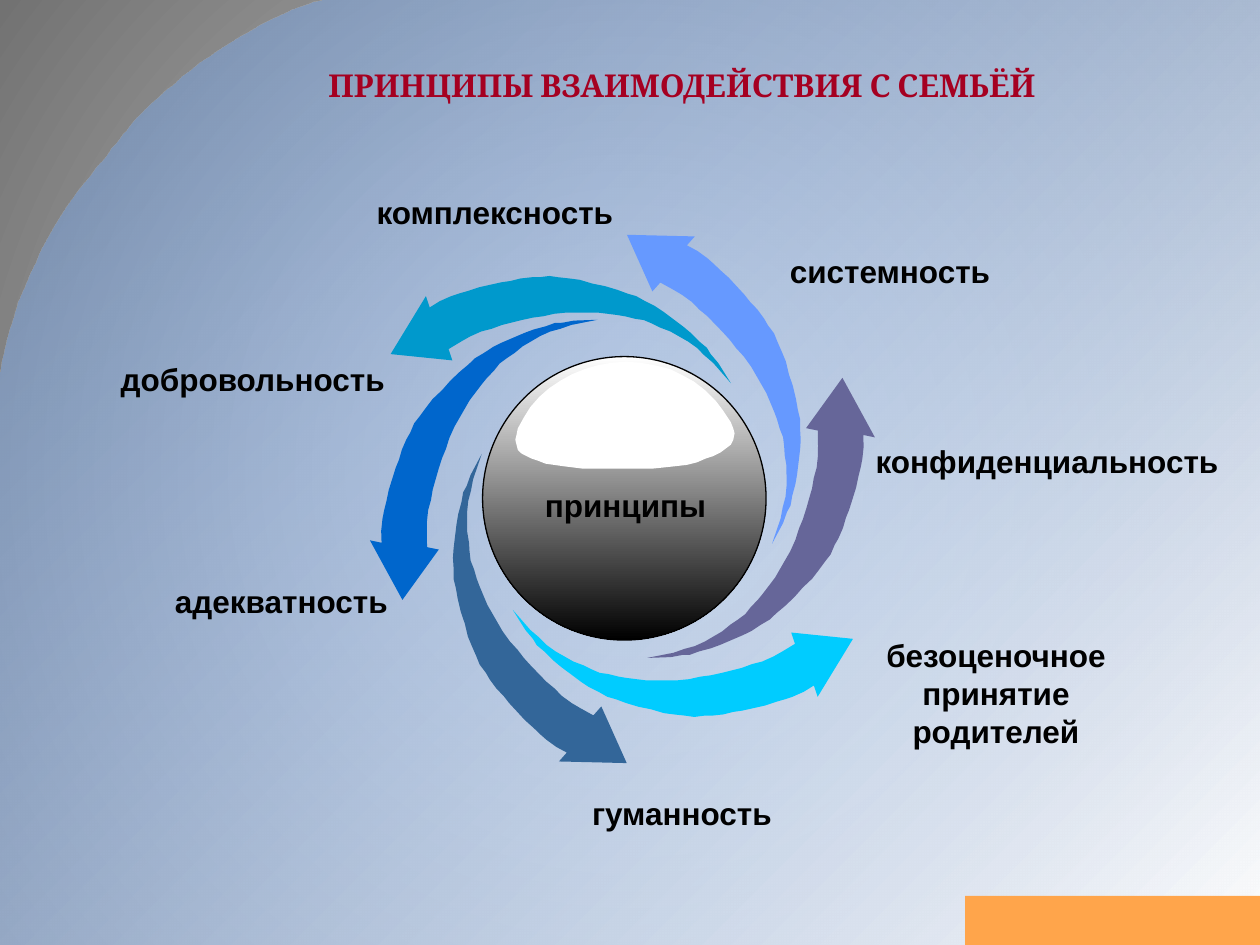
"""Builds a slide with six swirling arrows round a sphere, each naming a principle of work with families."""
from lxml.etree import SubElement
from pptx import Presentation
from pptx.dml.color import RGBColor
from pptx.enum.shapes import MSO_SHAPE as Shape
from pptx.enum.text import MSO_ANCHOR as Anchor, MSO_AUTO_SIZE as AutoSize, PP_ALIGN as Align
from pptx.oxml import parse_xml
from pptx.oxml.ns import nsdecls, qn
from pptx.util import Inches, Pt

COLUMNS, ROWS = 1000, 750
CELL = Inches(10) // COLUMNS

BLACK = RGBColor(0x00, 0x00, 0x00)
WHITE = RGBColor(0xFF, 0xFF, 0xFF)
CRIMSON = RGBColor(0xA5, 0x00, 0x21)
ORANGE = RGBColor(0xFF, 0xA5, 0x4B)
LIGHT_GREY = RGBColor(0xCF, 0xCF, 0xCF)
DARK_GREY = RGBColor(0x72, 0x72, 0x72)
SKY = RGBColor(0x69, 0x9D, 0xE9)
CYAN = RGBColor(0x00, 0xCC, 0xFF)
STEEL = RGBColor(0x33, 0x66, 0x99)
BLUE = RGBColor(0x00, 0x66, 0xCC)
TEAL = RGBColor(0x00, 0x99, 0xCC)
PERIWINKLE = RGBColor(0x66, 0x99, 0xFF)
VIOLET = RGBColor(0x66, 0x66, 0x99)

TITLE = "ПРИНЦИПЫ ВЗАИМОДЕЙСТВИЯ С СЕМЬЁЙ"
TITLE_BOX = (162, 29, 759, 77)
SPHERE_BOX = (383, 283, 225, 225)
CORNER_BOX = (766, 711, 234, 39)

LABELS = [
    ("гуманность", (460, 625, 165, 40), Align.LEFT, False),
    ("добровольность", (86, 281, 232, 40), Align.LEFT, False),
    ("безоценочное\nпринятие\nродителей", (689, 500, 203, 101), Align.CENTER, False),
    ("адекватность", (129, 457, 308, 40), Align.LEFT, True),
    ("принципы", (383, 381, 227, 40), Align.CENTER, True),
    ("комплексность", (289, 148, 210, 40), Align.LEFT, False),
    ("конфиденциальность", (677, 346, 308, 40), Align.CENTER, True),
    ("системность", (617, 195, 261, 40), Align.LEFT, True),
]

ARROWS = [
    (CYAN, 407, 484), (STEEL, 278, 456), (BLUE, 235, 307),
    (TEAL, 310, 219), (PERIWINKLE, 447, 251), (VIOLET, 483, 384),
]
ARROW_TURN = 360 / len(ARROWS)

ARROW_OUTLINE = [
    (224, 27), (221, 18), (270, 23), (242, 69), (239, 60), (231, 65), (222, 69), (216, 71),
    (209, 73), (200, 76), (191, 78), (182, 80), (175, 81), (167, 83), (158, 84), (152, 84),
    (144, 85), (137, 84), (128, 83), (120, 82), (110, 79), (100, 77), (90, 74), (82, 71),
    (75, 69), (68, 65), (60, 61), (54, 57), (46, 51), (38, 45), (32, 40), (25, 33),
    (19, 28), (16, 23), (10, 16), (0, 0), (14, 16), (21, 22), (27, 28), (34, 33),
    (41, 37), (48, 41), (56, 44), (62, 47), (69, 50), (76, 51), (84, 53), (90, 54),
    (98, 55), (106, 56), (120, 56), (130, 56), (140, 55), (149, 53), (157, 52), (166, 50),
    (174, 48), (182, 46), (190, 43), (198, 41), (207, 37), (214, 33),
]
GLOSS_OUTLINE = [
    (580, 335), (582, 340), (583, 344), (582, 349), (580, 353), (576, 356), (572, 359),
    (566, 362), (560, 364), (553, 367), (545, 369), (536, 370), (527, 371), (517, 372),
    (471, 372), (463, 372), (455, 371), (447, 370), (440, 369), (433, 368), (428, 366),
    (422, 364), (418, 362), (414, 360), (411, 357), (410, 353), (409, 349), (410, 345),
    (411, 340), (416, 331), (421, 323), (428, 315), (436, 308), (445, 302), (454, 297),
    (464, 293), (474, 290), (485, 288), (497, 287), (509, 288), (520, 290), (532, 293),
    (542, 298), (551, 303), (560, 310), (568, 318), (574, 326),
]
VEIL_CURVES = [
    ((258, 0), (190, 16), (116, 83), (98, 107)),
    ((98, 107), (80, 132), (16, 194), (0, 301)),
]
CURVE_STEPS = 24


def curve_points(controls):
    points = []
    for step in range(CURVE_STEPS + 1):
        t = step / CURVE_STEPS
        weights = ((1 - t) ** 3, 3 * t * (1 - t) ** 2, 3 * t ** 2 * (1 - t), t ** 3)
        points.append(tuple(sum(w * point[axis] for w, point in zip(weights, controls))
                            for axis in (0, 1)))
    return points


def place(shape, box):
    shape.left, shape.top, shape.width, shape.height = (CELL * length for length in box)


def set_gradient(fill, colors, angle):
    fill.gradient()
    fill.gradient_angle = angle
    for stop, color in zip(fill.gradient_stops, colors):
        stop.color.rgb = color


def add_outline(slide, points):
    builder = slide.shapes.build_freeform(*points[0], scale=CELL)
    builder.add_line_segments(points[1:], close=True)
    shape = builder.convert_to_shape()
    shape.shadow.inherit = False
    shape.line.fill.background()
    return shape


def add_solid(shape, color):
    shape.fill.solid()
    shape.fill.fore_color.rgb = color


def add_preset(slide, kind, box):
    shape = slide.shapes.add_shape(kind, *(CELL * length for length in box))
    shape.shadow.inherit = False
    return shape


def write(text_frame, text, font_name, color, align):
    text_frame.text = text
    for paragraph in text_frame.paragraphs:
        paragraph.alignment = align
        for run in paragraph.runs:
            run.font.name, run.font.size, run.font.bold = font_name, Pt(18), True
            run.font.color.rgb = color


def add_background(slide):
    set_gradient(slide.background.fill, (LIGHT_GREY, DARK_GREY), 0)
    linear = next(slide.element.iter(qn("a:lin")))
    linear.getparent().replace(linear, parse_xml(
        f'<a:path {nsdecls("a")} path="circle">'
        '<a:fillToRect l="50000" t="50000" r="50000" b="50000"/></a:path>'))
    points = [point for controls in VEIL_CURVES for point in curve_points(controls)]
    veil = add_outline(slide, points + [(0, ROWS), (COLUMNS, ROWS), (COLUMNS, 0)])
    set_gradient(veil.fill, (SKY, WHITE), 315)
    first_color = next(veil.element.iter(qn("a:srgbClr")))
    SubElement(first_color, qn("a:alpha")).set("val", "39000")


def add_title(slide):
    title = slide.shapes.title
    place(title, TITLE_BOX)
    title.text_frame.vertical_anchor = Anchor.MIDDLE
    write(title.text_frame, TITLE, "Cambria", CRIMSON, Align.CENTER)
    slide.shapes.element.append(title.element)


def add_swirl(slide):
    for index, (color, left, top) in enumerate(ARROWS):
        arrow = add_outline(slide, ARROW_OUTLINE)
        arrow.left, arrow.top = CELL * left, CELL * top
        arrow.rotation = index * ARROW_TURN
        add_solid(arrow, color)
    sphere = add_preset(slide, Shape.OVAL, SPHERE_BOX)
    set_gradient(sphere.fill, (WHITE, BLACK), 270)
    sphere.line.color.rgb = BLACK
    sphere.line.width = Pt(0.75)
    add_solid(add_outline(slide, GLOSS_OUTLINE), WHITE)


def add_labels(slide):
    for text, box, align, wraps in LABELS:
        label = slide.shapes.add_textbox(*(CELL * length for length in box))
        label.text_frame.word_wrap = wraps
        label.text_frame.auto_size = AutoSize.SHAPE_TO_FIT_TEXT
        write(label.text_frame, text, "Arial", BLACK, align)


def main():
    presentation = Presentation()
    presentation.slide_width, presentation.slide_height = CELL * COLUMNS, CELL * ROWS
    slide = presentation.slides.add_slide(presentation.slide_layouts[5])
    add_background(slide)
    add_title(slide)
    add_swirl(slide)
    add_labels(slide)
    corner = add_preset(slide, Shape.RECTANGLE, CORNER_BOX)
    add_solid(corner, ORANGE)
    corner.line.fill.background()
    presentation.save("out.pptx")


if __name__ == "__main__":
    main()
